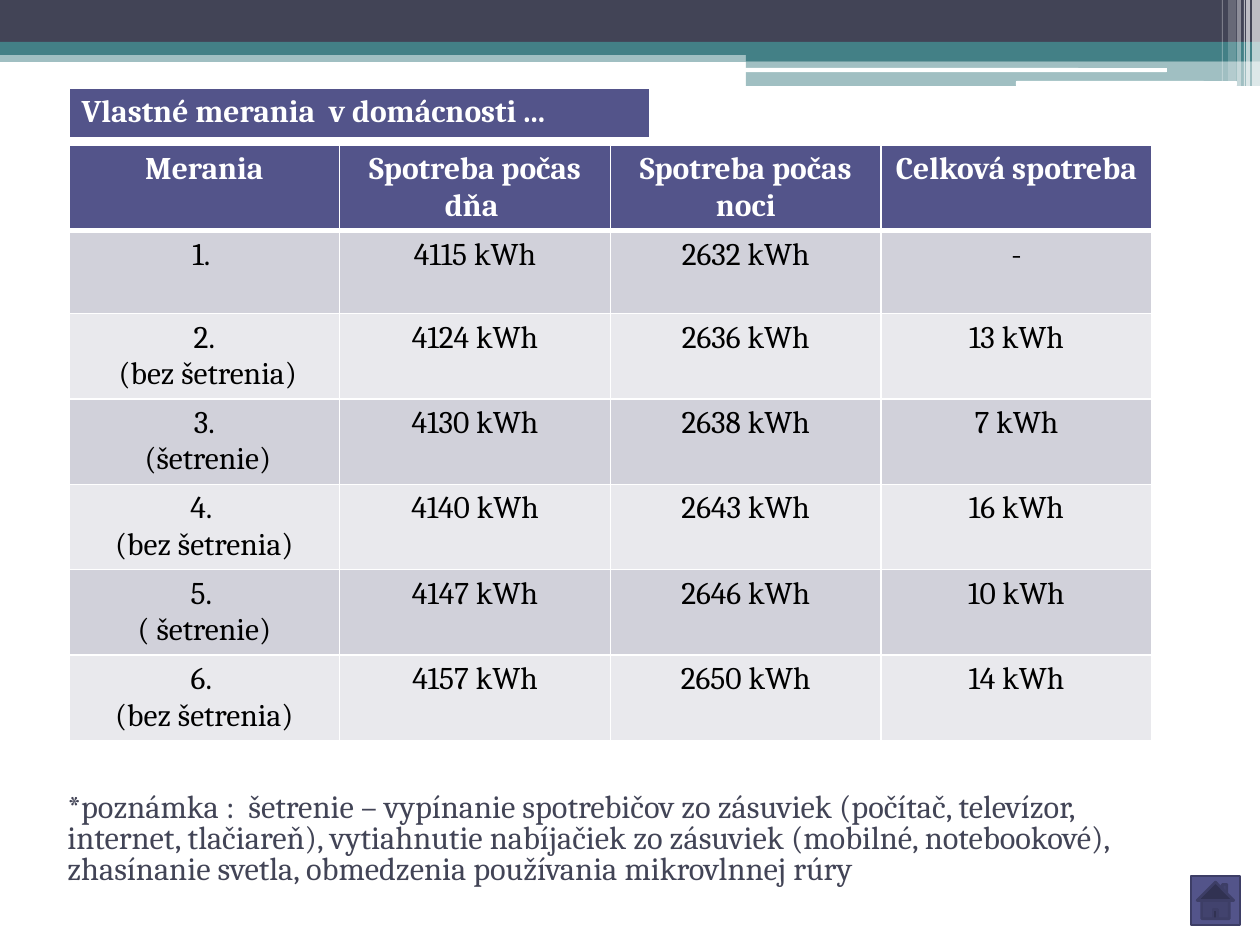
import dataclasses

import lxml.etree
import pptx
import pptx.dml.color
import pptx.enum.shapes
import pptx.enum.text
import pptx.oxml.ns
import pptx.util

RGB = pptx.dml.color.RGBColor
KIND = pptx.enum.shapes.MSO_SHAPE
ALIGN = pptx.enum.text.PP_ALIGN
qn = pptx.oxml.ns.qn

WHITE = RGB(0xFF, 0xFF, 0xFF)
BLACK = RGB(0, 0, 0)
NAVY = RGB(0x42, 0x44, 0x56)
TEAL = RGB(0x43, 0x80, 0x86)
VIOLET = RGB(0x53, 0x54, 0x8A)
EDGE = RGB(0x3D, 0x3E, 0x66)
DARK = RGB(0xD1, 0xD1, 0xDA)
LIGHT = RGB(0xE9, 0xE9, 0xED)
FONT = "Cambria"
SCALE = 914400 / 126


@dataclasses.dataclass
class Box:
    left: int
    top: int
    width: int
    height: int


@dataclasses.dataclass
class Bar:
    box: Box
    color: RGB
    alpha: int = 100
    kind: int = KIND.RECTANGLE


BARS = [
    Bar(Box(0, 50, 1260, 12), TEAL, 50),
    Bar(Box(0, 0, 1260, 42), NAVY),
    Bar(Box(0, 42, 1260, 13), TEAL),
    Bar(Box(746, 49, 514, 12), TEAL),
    Bar(Box(746, 61, 514, 25), TEAL, 50),
    Bar(Box(745, 68, 422, 4), WHITE, kind=KIND.ROUNDED_RECTANGLE),
    Bar(Box(1016, 81, 221, 5), WHITE, kind=KIND.ROUNDED_RECTANGLE),
    Bar(Box(1252, 0, 8, 86), WHITE, 65),
    Bar(Box(1246, 0, 4, 86), WHITE, 65),
    Bar(Box(1244, 0, 1, 86), WHITE, 60),
    Bar(Box(1237, 0, 4, 86), WHITE, 40),
    Bar(Box(1228, 0, 8, 81), WHITE, 20),
    Bar(Box(1222, 0, 1, 81), WHITE, 30),
]

ROWS = [
    ("Merania", "Spotreba počas dňa ", "Spotreba počas noci", "Celková spotreba"),
    ("1. ", "4115 kWh", "2632 kWh", "-"),
    ("2.\n (bez šetrenia)", "4124 kWh", "2636 kWh", "13 kWh"),
    ("3.\n (šetrenie)", "4130 kWh", "2638 kWh", "7 kWh"),
    ("4. \n(bez šetrenia)", "4140 kWh", "2643 kWh", "16 kWh"),
    ("5. \n( šetrenie)", "4147 kWh", "2646 kWh", "10 kWh"),
    ("6. \n(bez šetrenia)", "4157 kWh", "2650 kWh", "14 kWh"),
]
NOTE = (
    "*poznámka :  šetrenie – vypínanie spotrebičov zo zásuviek "
    "(počítač, televízor, internet, tlačiareň), vytiahnutie nabíjačiek "
    "zo zásuviek (mobilné, notebookové), zhasínanie svetla, "
    "obmedzenia používania mikrovlnnej rúry"
)


def px(size: int) -> int:
    return round(size * SCALE)


def place(box: Box) -> tuple[int, ...]:
    return tuple(px(size) for size in dataclasses.astuple(box))


def style(frame, size: float, color: RGB, bold: bool = False, align=ALIGN.LEFT) -> None:
    for para in frame.paragraphs:
        para.alignment = align
        for run in para.runs:
            run.font.name = FONT
            run.font.size = pptx.util.Pt(size)
            run.font.bold = bold
            run.font.color.rgb = color


def draw_bar(slide, bar: Bar):
    shape = slide.shapes.add_shape(bar.kind, *place(bar.box))
    shape.shadow.inherit = False
    shape.fill.solid()
    shape.fill.fore_color.rgb = bar.color
    shape.line.fill.background()
    if bar.alpha < 100:
        tint = shape._element.spPr.find(qn("a:solidFill"))[0]
        lxml.etree.SubElement(tint, qn("a:alpha"), val=str(bar.alpha * 1000))
    return shape


def add_edges(cell, base: int) -> None:
    props = cell._tc.get_or_add_tcPr()
    for side, width in (("L", 1), ("R", 1), ("T", 1), ("B", base)):
        edge = lxml.etree.SubElement(
            props, qn(f"a:ln{side}"), w=str(pptx.util.Pt(width))
        )
        fill = lxml.etree.SubElement(edge, qn("a:solidFill"))
        lxml.etree.SubElement(fill, qn("a:srgbClr"), val=str(WHITE))


def draw_table(slide, box: Box, rows: list[tuple[str, ...]], align) -> None:
    table = slide.shapes.add_table(len(rows), len(rows[0]), *place(box)).table
    for i, row in enumerate(rows):
        head = i == 0
        for j, text in enumerate(row):
            cell = table.cell(i, j)
            add_edges(cell, 3 if head else 1)
            cell.fill.solid()
            cell.fill.fore_color.rgb = VIOLET if head else DARK if i % 2 else LIGHT
            cell.text_frame.text = text
            style(cell.text_frame, 18, WHITE if head else BLACK, head, align)


def draw_note(slide, box: Box) -> None:
    frame = slide.shapes.add_textbox(*place(box)).text_frame
    frame.word_wrap = True
    frame.text = NOTE
    style(frame, 18.5, NAVY)
    para = frame.paragraphs[0]
    para.line_spacing = 0.8
    para.space_before = pptx.util.Pt(3)
    props = para._p.get_or_add_pPr()
    props.set("marL", str(px(6)))
    props.set("indent", "0")


def main() -> None:
    deck = pptx.Presentation()
    deck.slide_width, deck.slide_height = px(1260), px(945)
    slide = deck.slides.add_slide(deck.slide_layouts[6])
    for bar in BARS:
        draw_bar(slide, bar)
    draw_table(slide, Box(69, 145, 1083, 582), ROWS, ALIGN.CENTER)
    title = [("Vlastné merania  v domácnosti ...",)]
    draw_table(slide, Box(69, 88, 581, 51), title, ALIGN.LEFT)
    draw_note(slide, Box(49, 787, 1148, 119))
    home = draw_bar(
        slide, Bar(Box(1191, 876, 49, 49), VIOLET, kind=KIND.ACTION_BUTTON_HOME)
    )
    home.line.color.rgb = EDGE
    home.line.width = pptx.util.Pt(1.5)
    deck.save("out.pptx")


if __name__ == "__main__":
    main()
